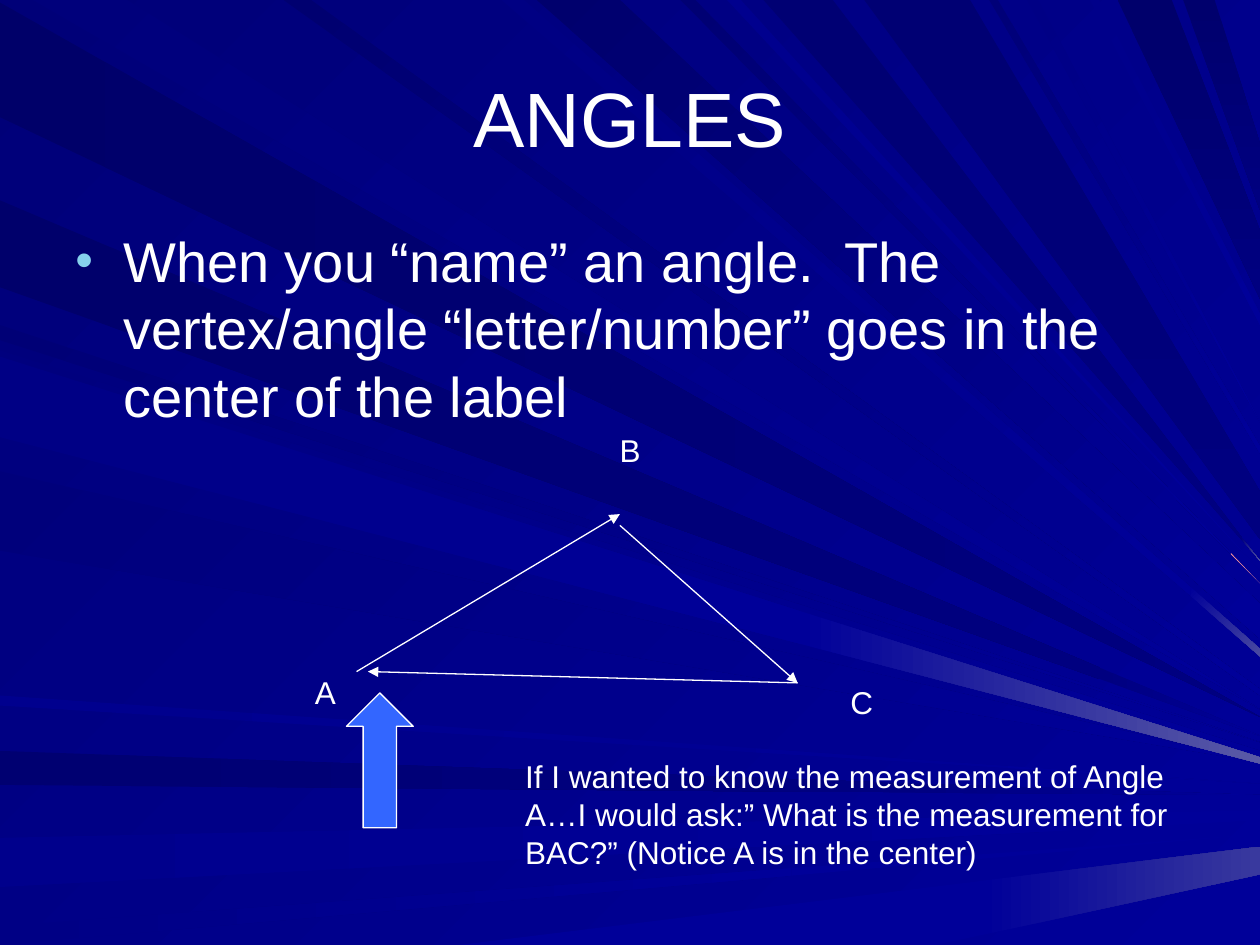
from dataclasses import dataclass
from typing import Optional

import pptx
import pptx.dml.color
import pptx.enum.dml
import pptx.enum.shapes
import pptx.enum.text
import pptx.oxml
import pptx.oxml.ns
import pptx.util

COLUMNS, ROWS = 1000, 750
CELL = pptx.util.Inches(10) // COLUMNS
FONT = "Arial"
COLORS = {
    "text": "FFFFFF", "bullet": "86D1EC", "arrow": "3366FF", "back": "000078",
    "navy": "000080", "bright": "000099", "pink": "FF9999",
    "glow": "5A5AA6", "dim glow": "4A4AA1", "faint glow": "39399E",
}


@dataclass(frozen=True)
class Beam:
    """A beam from a stretch of one slide edge to the right edge.

    Past the seam column it goes on from its end colour to the tail colour.
    """
    edge: str
    near: tuple
    far: int
    start: str
    end: str = "bright"
    spread: int = 0
    diagonal: bool = False
    seam: int = COLUMNS
    tail: str = "bright"


@dataclass(frozen=True)
class Label:
    text: str
    area: tuple


BEAMS = [
    Beam("left", (2, 93), 569, "000069", "navy"),
    Beam("top", (26, 101), 563, "00007B"),
    Beam("left", (596, 623), 631, "000071", "navy", seam=701),
    Beam("left", (665, 704), 643, "00008C", spread=8, seam=831),
    Beam("left", (735, 750), 662, "000085", seam=628),
    Beam("bottom", (364, 742), 672, "000099", spread=22, seam=780, tail="faint glow"),
    Beam("left", (258, 270), 589, "000076", diagonal=True),
    Beam("left", (159, 228), 584, "00006B", "navy", seam=873),
    Beam("top", (398, 416), 515, "000083", spread=6, seam=945, tail="dim glow"),
    Beam("top", (426, 492), 479, "00006D", spread=28),
    Beam("top", (540, 552), 463, "000073", seam=977, tail="pink"),
    Beam("top", (606, 661), 445, "000073", "navy", seam=986, tail="glow"),
    Beam("top", (887, 930), 183, "00006B", "navy", spread=54),
    Beam("top", (939, 964), 114, "00006D", "navy", spread=53),
    Beam("left", (278, 342), 596, "00007E", spread=6, diagonal=True),
    Beam("left", (374, 437), 605, "00007B", diagonal=True),
    Beam("left", (552, 560), 622, "00008E"),
    Beam("top", (225, 247), 547, "000070", spread=5),
    Beam("top", (577, 588), 453, "00008E"),
    Beam("top", (686, 770), 390, "000073", "navy", spread=38),
    Beam("top", (785, 792), 354, "000078", spread=6),
    Beam("top", (815, 824), 335, "000085"),
    Beam("top", (865, 872), 249, "00008A", spread=9),
    Beam("left", (283, 347), 601, "000085", spread=5, seam=635, tail="glow"),
]
SIDES = [
    (283, 533, 492, 408),
    (492, 417, 633, 542),
    (633, 542, 292, 533),
]
LABELS = [
    Label("A", (240, 529, 43, 40)),
    Label("B", (482, 337, 60, 40)),
    Label("C", (665, 537, 68, 40)),
    Label("If I wanted to know the measurement of Angle A…I would ask:” "
          "What is the measurement for BAC?” (Notice A is in the center)",
          (407, 596, 552, 100)),
]


def cells(*counts: int) -> list:
    return [count * CELL for count in counts]


def color(value: str) -> pptx.dml.color.RGBColor:
    return pptx.dml.color.RGBColor.from_string(COLORS.get(value, value))


def paint(fill, start: str, end: Optional[str] = None, angle: int = 0) -> None:
    """Fill with one colour, or with a gradient at a clockwise angle."""
    if end is None or color(start) == color(end):
        fill.solid()
        fill.fore_color.rgb = color(start)
        return
    fill.gradient()
    fill.gradient_angle = (360 - angle) % 360
    for stop, value in zip(fill.gradient_stops, (start, end)):
        stop.color.rgb = color(value)


def outline(line) -> None:
    line.color.rgb = color("text")
    line.width = pptx.util.Pt(0.75)


def write(box, text: str, *, size: int = 18, align=None, anchor=None,
          grow: bool = False, bullet: bool = False) -> None:
    frame = box.text_frame
    frame.word_wrap = True
    kinds = pptx.enum.text.MSO_AUTO_SIZE
    frame.auto_size = kinds.SHAPE_TO_FIT_TEXT if grow else kinds.NONE
    if anchor is not None:
        frame.vertical_anchor = anchor
    para = frame.paragraphs[0]
    if align is not None:
        para.alignment = align
    if bullet:
        add_bullet(para)
    span = para.add_run()
    span.text = text
    span.font.name = FONT
    span.font.size = pptx.util.Pt(size)
    span.font.color.rgb = color("text")


def add_bullet(para) -> None:
    properties = para._p.get_or_add_pPr()
    indent = pptx.util.Inches(0.38)
    properties.set("marL", str(indent))
    properties.set("indent", str(-indent))
    space = pptx.oxml.ns.nsdecls("a")
    for element in (
        f'<a:buClr {space}><a:srgbClr val="{COLORS["bullet"]}"/></a:buClr>',
        f'<a:buSzPct {space} val="90000"/>',
        f'<a:buFont {space} typeface="{FONT}"/>',
        f'<a:buChar {space} char="•"/>',
    ):
        properties.append(pptx.oxml.parse_xml(element))


def draw_polygon(page, points: list, start: str, end: str, angle: int) -> None:
    builder = page.shapes.build_freeform(*points[0], scale=CELL)
    builder.add_line_segments(points[1:], close=True)
    shape = builder.convert_to_shape()
    shape.shadow.inherit = False
    paint(shape.fill, start, end, angle)
    shape.line.fill.background()


def cut(near: tuple, far: tuple, column: int) -> tuple:
    """Point in the given column on the line from near to far."""
    share = (column - near[0]) / (far[0] - near[0])
    return column, round(near[1] + share * (far[1] - near[1]))


def draw_beam(page, beam: Beam) -> None:
    on_top = beam.edge == "top"
    if beam.edge == "left":
        upper, lower = [(0, row) for row in beam.near]
    else:
        row = 0 if on_top else ROWS
        upper, lower = [(column, row) for column in sorted(beam.near, reverse=on_top)]
    upper_far, lower_far = (COLUMNS, beam.far), (COLUMNS, beam.far + beam.spread)
    upper_cut = cut(upper, upper_far, beam.seam)
    lower_cut = cut(lower, lower_far, beam.seam)
    angle = 45 if on_top or beam.diagonal else 0
    head_angle = 90 if on_top and beam.end == "navy" else angle
    draw_polygon(page, [upper, upper_cut, lower_cut, lower], beam.start, beam.end, head_angle)
    if beam.seam < COLUMNS:
        draw_polygon(page, [upper_cut, upper_far, lower_far, lower_cut],
                     beam.tail if beam.tail == "pink" else beam.end, beam.tail, angle)


def draw_side(page, ends: tuple) -> None:
    kind = pptx.enum.shapes.MSO_CONNECTOR.STRAIGHT
    connector = page.shapes.add_connector(kind, *cells(*ends))
    outline(connector.line)
    space = pptx.oxml.ns.nsdecls("a")
    connector.line._get_or_add_ln().append(
        pptx.oxml.parse_xml(f'<a:tailEnd {space} type="triangle"/>'))
    connector._element.spPr.append(pptx.oxml.parse_xml(f"<a:effectLst {space}/>"))


def draw_pointer(page) -> None:
    kind = pptx.enum.shapes.MSO_SHAPE.UP_ARROW
    pointer = page.shapes.add_shape(kind, *cells(275, 550, 53, 107))
    pointer.shadow.inherit = False
    paint(pointer.fill, "arrow")
    outline(pointer.line)


def main() -> None:
    deck = pptx.Presentation()
    deck.slide_width, deck.slide_height = cells(COLUMNS, ROWS)
    page = deck.slides.add_slide(deck.slide_layouts.get_by_name("Title Only"))
    paint(page.background.fill, "back", "bright", 45)
    for beam in BEAMS:
        draw_beam(page, beam)

    title = page.shapes.title
    title.left, title.top, title.width, title.height = cells(50, 30, 900, 125)
    write(title, "ANGLES", size=44, align=pptx.enum.text.PP_ALIGN.CENTER,
          anchor=pptx.enum.text.MSO_ANCHOR.MIDDLE)
    page.shapes._spTree.append(title._element)  # in front of the beams

    body = page.shapes.add_textbox(*cells(50, 175, 900, 495))
    write(body, "When you “name” an angle.  The vertex/angle “letter/number” "
          "goes in the center of the label", size=32, bullet=True)
    for side in SIDES:
        draw_side(page, side)
    draw_pointer(page)
    for label in LABELS:
        write(page.shapes.add_textbox(*cells(*label.area)), label.text, grow=True)
    deck.save("out.pptx")


if __name__ == "__main__":
    main()
